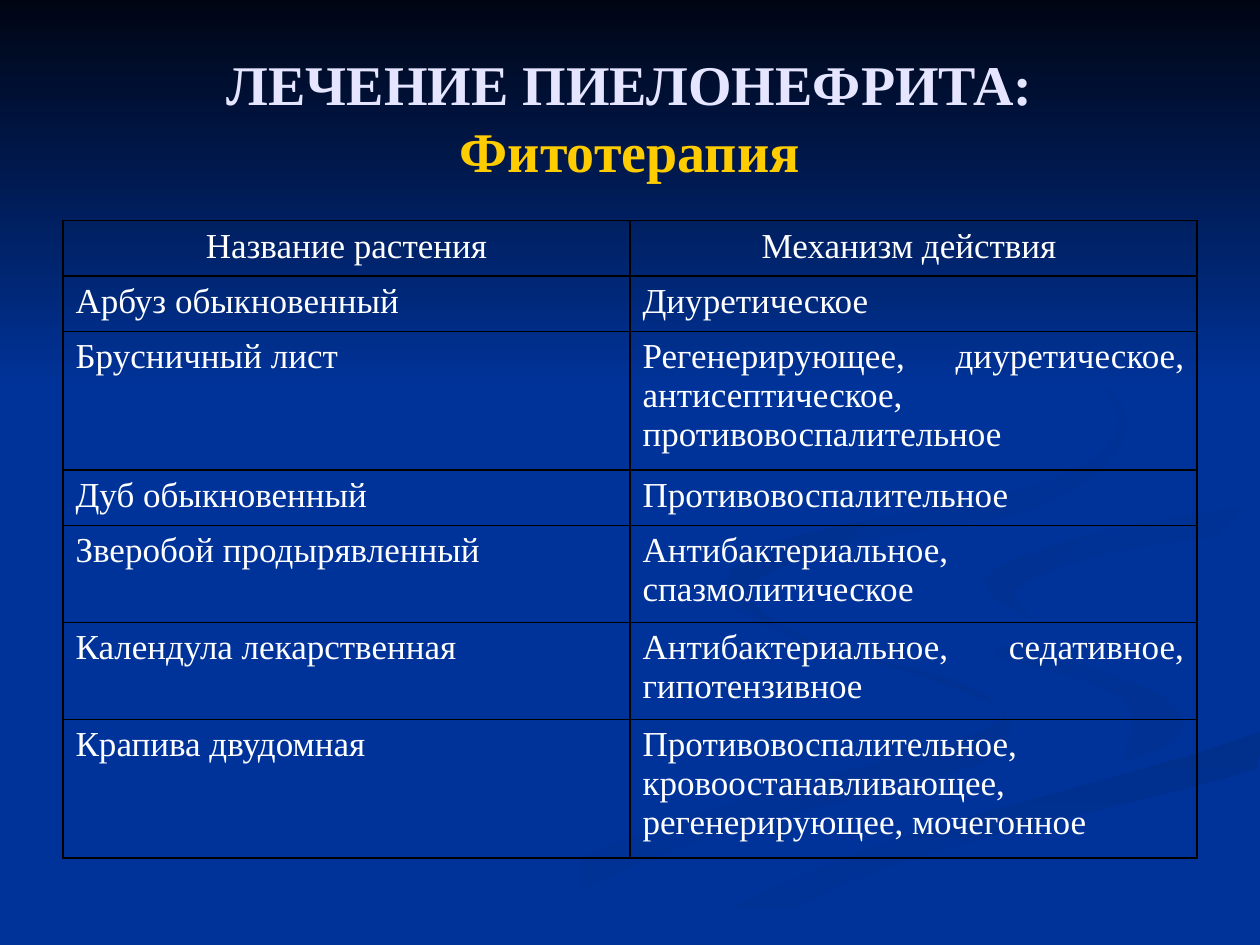
from dataclasses import dataclass

from lxml.etree import SubElement
from pptx import Presentation
from pptx.dml.color import RGBColor
from pptx.enum.shapes import MSO_SHAPE
from pptx.enum.text import MSO_ANCHOR, PP_ALIGN
from pptx.oxml.ns import qn
from pptx.util import Inches, Pt

FONT = "Times New Roman"
WIDTH, HEIGHT = 10, 7.5
CURVE_STEPS = 4
COLORS = {
    "background": "003399",
    "night": "000514",
    "shade": "003193",
    "deep shade": "002F8C",
    "title": "E5E5FF",
    "accent": "FFCC00",
    "text": "FFFFFF",
    "border": "000000",
}


@dataclass(frozen=True)
class Ribbon:
    """A smooth closed outline through points in inches, shaded along a clockwise angle."""
    points: list[tuple[float, float]]
    start: str
    end: str
    angle: int = 0


RIBBONS = [
    Ribbon([(7.8, 5.5), (6.4, 5.07), (5.75, 4.6), (6, 4.95), (7.6, 5.47), (7.8, 5.8),
            (5.4, 6.5), (3, 7.49), (3.6, 7.49), (5.6, 6.65), (7.8, 6.05)],
           "background", "shade"),
    Ribbon([(9.43, 5.7), (8.7, 5.3), (7.6, 4.98), (7.24, 4.64), (7.66, 5.12),
            (8.9, 5.53), (8.94, 6.05)], "background", "shade", 45),
    Ribbon([(5.03, 7.49), (5.7, 7.49), (7.2, 6.82), (9.98, 6.1), (9.98, 5.81),
            (8.3, 6.3), (6.3, 6.93)], "deep shade", "background", 90),
    Ribbon([(7.25, 4.64), (7.9, 5.09), (9.05, 5.4), (9.26, 5.93), (7, 6.55),
            (4.77, 7.49), (5.2, 7.47), (7, 6.69), (9.99, 5.81), (9.99, 5.38),
            (8.5, 5.03), (7.82, 4.6), (8.65, 4.24), (9.99, 4.02), (9.99, 3.87),
            (8.1, 4.17)], "background", "background"),
    Ribbon([(7.81, 4.6), (8.26, 4.96), (8.06, 4.68), (8.8, 4.39), (9.98, 4.2),
            (9.98, 4.02), (8.65, 4.24)], "shade", "background", 45),
    Ribbon([(6.8, 4.3), (8.25, 4.02), (8.94, 3.44), (8.6, 2.9), (7.62, 2.33),
            (8.5, 2.8), (8.88, 3.4), (8.2, 3.86), (6.3, 4.26), (5.77, 4.62),
            (6.2, 5), (5.95, 4.65)], "deep shade", "background", 45),
]


@dataclass(frozen=True)
class Plant:
    name: str
    action: str
    height: float


HEADER = Plant("Название растения", "Механизм действия ", 0.44)
PLANTS = [
    Plant("Арбуз обыкновенный ", "Диуретическое", 0.44),
    Plant("Брусничный лист", "Регенерирующее, диуретическое, антисептическое, "
          "противовоспалительное", 1.1),
    Plant("Дуб обыкновенный", "Противовоспалительное", 0.44),
    Plant("Зверобой продырявленный", "Антибактериальное, спазмолитическое", 0.77),
    Plant("Календула лекарственная", "Антибактериальное, седативное, гипотензивное", 0.77),
    Plant("Крапива двудомная", "Противовоспалительное, кровоостанавливающее, "
          "регенерирующее, мочегонное", 1.1),
]


def color(name: str) -> RGBColor:
    return RGBColor.from_string(COLORS[name])


def blend(a: float, b: float, c: float, d: float, t: float) -> float:
    """Catmull-Rom value between b and c at fraction t."""
    return b + t / 2 * (c - a + t * (2 * a - 5 * b + 4 * c - d
                                     + t * (3 * (b - c) + d - a)))


def smooth_outline(points: list[tuple[float, float]]) -> list[tuple[int, int]]:
    """Points along the closed curve, kept inside the slide."""
    outline = []
    for index in range(len(points)):
        corners = [points[(index + offset) % len(points)] for offset in range(-1, 3)]
        for step in range(CURVE_STEPS):
            x, y = (blend(*values, step / CURVE_STEPS) for values in zip(*corners))
            outline.append((Inches(min(x, WIDTH)), Inches(min(y, HEIGHT))))
    return outline


def shade(shape, start: str, end: str, angle: int) -> None:
    shape.shadow.inherit = False
    shape.line.fill.background()
    shape.fill.gradient()
    shape.fill.gradient_angle = (360 - angle) % 360
    for position, (stop, name) in enumerate(zip(shape.fill.gradient_stops, (start, end))):
        stop.color.rgb = color(name)
        stop.position = position


def draw_ribbon(slide, ribbon: Ribbon) -> None:
    start, *rest = smooth_outline(ribbon.points)
    builder = slide.shapes.build_freeform(*start)
    builder.add_line_segments(rest, close=True)
    shade(builder.convert_to_shape(), ribbon.start, ribbon.end, ribbon.angle)


def draw_sky(slide) -> None:
    sky = slide.shapes.add_shape(MSO_SHAPE.RECTANGLE, 0, 0, Inches(WIDTH), Inches(3.08))
    shade(sky, "night", "background", 90)


def draw_title(slide) -> None:
    title = slide.shapes.title
    slide.shapes.element.append(title.element)  # in front of the ribbons
    title.left, title.top = Inches(0.5), Inches(0.3)
    title.width, title.height = Inches(9), Inches(1.25)
    title.text_frame.vertical_anchor = MSO_ANCHOR.MIDDLE
    paragraph = title.text_frame.paragraphs[0]
    paragraph.alignment = PP_ALIGN.CENTER
    for text, name in (("ЛЕЧЕНИЕ ПИЕЛОНЕФРИТА: ", "title"), ("Фитотерапия", "accent")):
        run = paragraph.add_run()
        run.text = text
        run.font.name, run.font.size, run.font.bold = FONT, Pt(32), True
        run.font.color.rgb = color(name)


def add_borders(cell) -> None:
    properties = cell._tc.get_or_add_tcPr()
    for side in ("a:lnL", "a:lnR", "a:lnT", "a:lnB"):
        line = SubElement(properties, qn(side), w=str(Pt(1)))
        fill = SubElement(line, qn("a:solidFill"))
        SubElement(fill, qn("a:srgbClr"), val=COLORS["border"])


def fill_cell(cell, text: str, alignment: PP_ALIGN) -> None:
    add_borders(cell)
    cell.fill.background()
    cell.text_frame.text = text
    paragraph = cell.text_frame.paragraphs[0]
    paragraph.alignment = alignment
    font = paragraph.runs[0].font
    font.name, font.size, font.bold = FONT, Pt(20), False
    font.color.rgb = color("text")


def draw_table(slide) -> None:
    plants = [HEADER, *PLANTS]
    table = slide.shapes.add_table(len(plants), 2, Inches(0.5), Inches(1.75), Inches(9),
                                   Inches(sum(plant.height for plant in plants))).table
    table.first_row = table.horz_banding = False
    for row, plant in zip(table.rows, plants):
        row.height = Inches(plant.height)
        alignment = PP_ALIGN.CENTER if plant is HEADER else PP_ALIGN.JUSTIFY
        for cell, text in zip(row.cells, (plant.name, plant.action)):
            fill_cell(cell, text, alignment)


def main() -> None:
    presentation = Presentation()
    presentation.slide_width, presentation.slide_height = Inches(WIDTH), Inches(HEIGHT)
    slide = presentation.slides.add_slide(presentation.slide_layouts[5])
    slide.background.fill.solid()
    slide.background.fill.fore_color.rgb = color("background")
    for ribbon in RIBBONS:
        draw_ribbon(slide, ribbon)
    draw_sky(slide)
    draw_title(slide)
    draw_table(slide)
    presentation.save("out.pptx")


if __name__ == "__main__":
    main()
